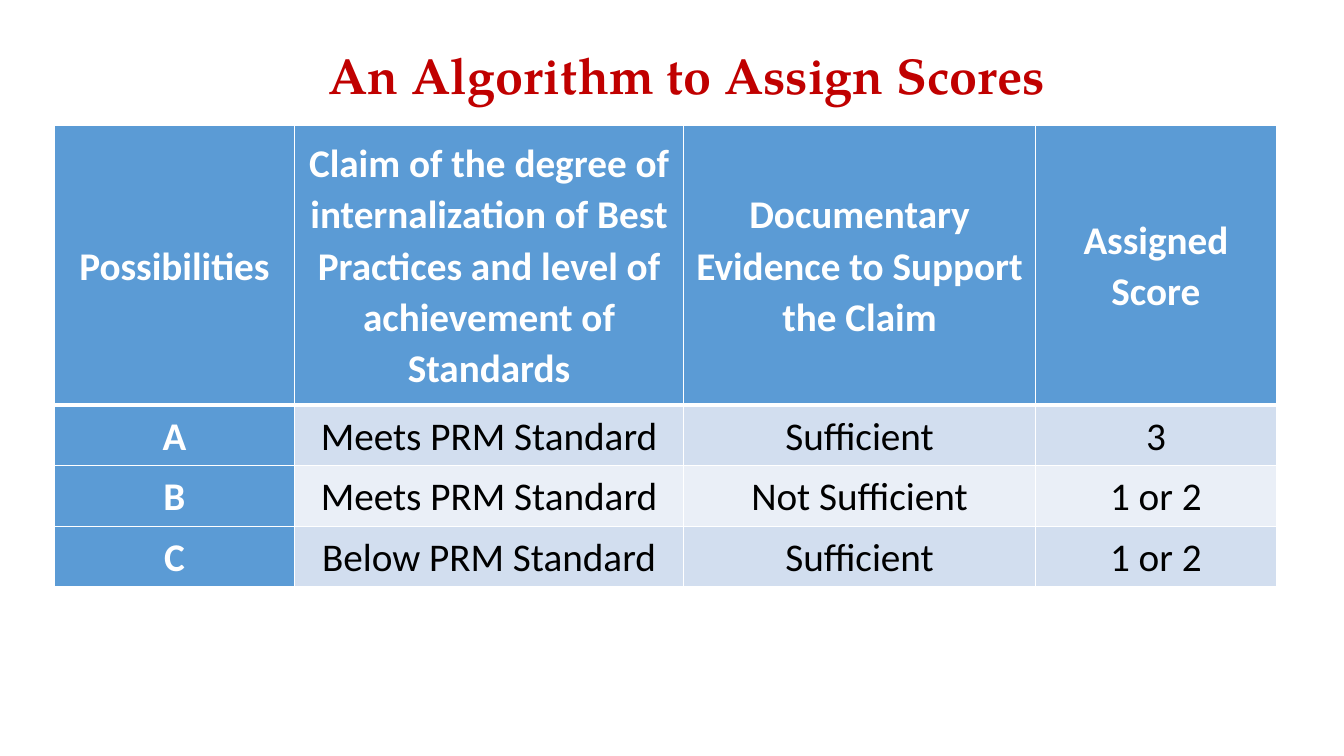
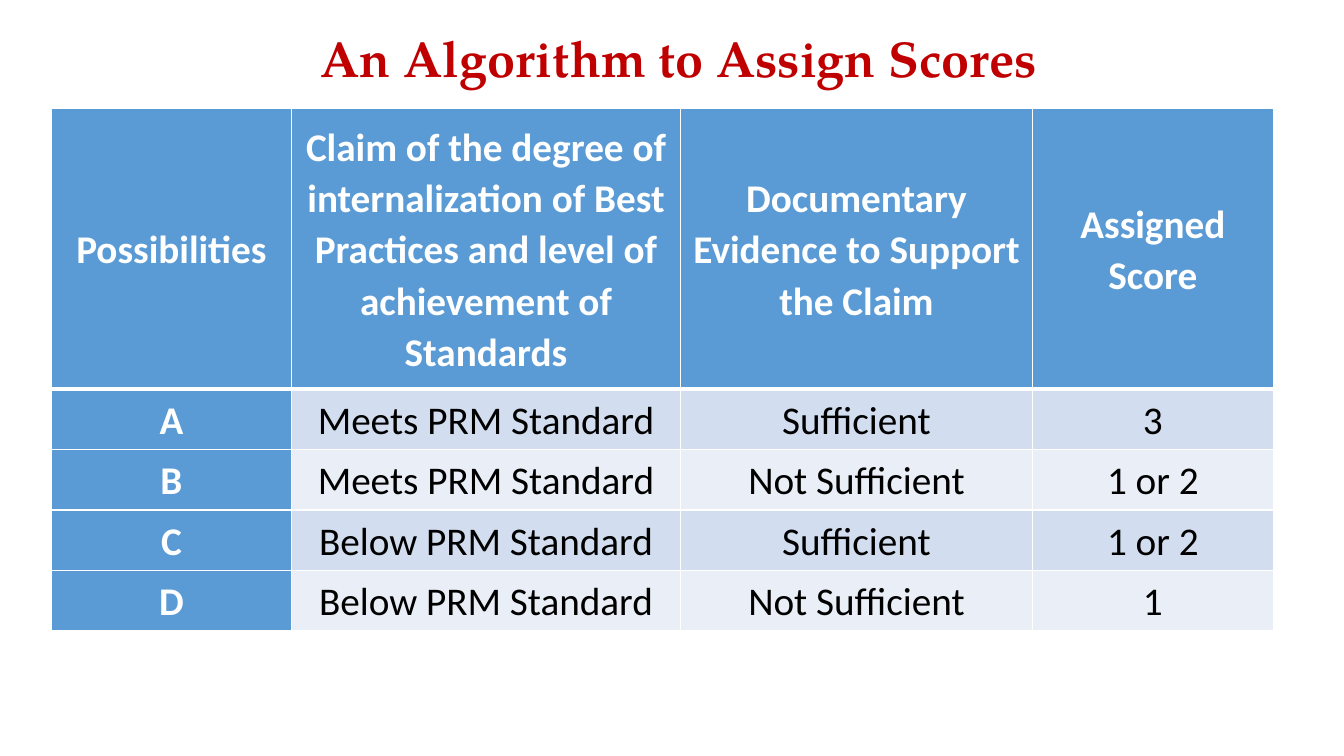
import lxml.etree
import pptx
import pptx.dml.color
import pptx.enum.text
import pptx.oxml.ns
import pptx.util

Inches = pptx.util.Inches
Pt = pptx.util.Pt
RGBColor = pptx.dml.color.RGBColor

TITLE_RED = RGBColor(0xC0, 0x00, 0x00)
HEADER_BLUE = RGBColor(0x5B, 0x9B, 0xD5)
BAND_DARK = RGBColor(0xD2, 0xDE, 0xEF)
BAND_LIGHT = RGBColor(0xEA, 0xEF, 0xF7)
WHITE = RGBColor(0xFF, 0xFF, 0xFF)
BLACK = RGBColor(0x00, 0x00, 0x00)

TITLE_FONT = "TeX Gyre Pagella"
TABLE_FONT = "Calibri"
TITLE_ONLY_LAYOUT = 5
LINE_SPACING = 1.07

COLUMN_WIDTHS = (2.38, 3.86, 3.49, 2.39)
HEADER_HEIGHT = 2.78
ROW_HEIGHT = 0.6

TITLE = "An Algorithm to Assign Scores"
HEADER = (
    "Possibilities",
    "Claim of the degree of internalization of Best Practices "
    "and level of achievement of Standards",
    "Documentary Evidence to Support the Claim",
    "Assigned Score",
)
POSSIBILITIES = (
    ("A", "Meets PRM Standard", "Sufficient", "3"),
    ("B", "Meets PRM Standard", "Not Sufficient", "1 or 2"),
    ("C", "Below PRM Standard", "Sufficient", "1 or 2"),
    ("D", "Below PRM Standard", "Not Sufficient", "1"),
)


def format_paragraph(paragraph, font_name, size, color, bold, alignment):
    paragraph.alignment = alignment
    paragraph.line_spacing = LINE_SPACING
    for run in paragraph.runs:
        run.font.name = font_name
        run.font.size = Pt(size)
        run.font.color.rgb = color
        run.font.bold = bold


def set_title(slide, left, top):
    title = slide.shapes.title
    title.left, title.top = Inches(left), Inches(top)
    title.width, title.height = Inches(7.35), Inches(0.72)
    text_frame = title.text_frame
    text_frame.text = TITLE
    text_frame.word_wrap = False
    text_frame.auto_size = pptx.enum.text.MSO_AUTO_SIZE.SHAPE_TO_FIT_TEXT
    text_frame.vertical_anchor = pptx.enum.text.MSO_ANCHOR.TOP
    paragraph = text_frame.paragraphs[0]
    paragraph.space_after = Pt(8)
    format_paragraph(paragraph, TITLE_FONT, 36, TITLE_RED, True,
                     pptx.enum.text.PP_ALIGN.LEFT)


def set_borders(cell, top_width, bottom_width):
    """Draw white cell borders; widths are in points, the sides are 1 pt."""
    widths = {"lnL": 1, "lnR": 1, "lnT": top_width, "lnB": bottom_width}
    properties = cell._tc.get_or_add_tcPr()
    qn = pptx.oxml.ns.qn
    for position, (tag, width) in enumerate(widths.items()):
        line = lxml.etree.Element(qn(f"a:{tag}"), w=str(Pt(width)))
        fill = lxml.etree.SubElement(line, qn("a:solidFill"))
        lxml.etree.SubElement(fill, qn("a:srgbClr"), val=str(WHITE))
        properties.insert(position, line)


def fill_cell(cell, text, row_index, column_index):
    is_heading = row_index == 0 or column_index == 0
    band = BAND_DARK if row_index % 2 else BAND_LIGHT
    cell.fill.solid()
    cell.fill.fore_color.rgb = HEADER_BLUE if is_heading else band
    cell.margin_left = cell.margin_right = Inches(0.07)
    cell.margin_top = cell.margin_bottom = 0
    cell.vertical_anchor = pptx.enum.text.MSO_ANCHOR.MIDDLE
    cell.text_frame.text = text
    format_paragraph(cell.text_frame.paragraphs[0], TABLE_FONT, 28,
                     WHITE if is_heading else BLACK, is_heading,
                     pptx.enum.text.PP_ALIGN.CENTER)
    set_borders(cell, top_width=3 if row_index == 1 else 1,
                bottom_width=3 if row_index == 0 else 1)


def add_score_table(slide, left, top, possibilities):
    rows = (HEADER, *possibilities)
    height = HEADER_HEIGHT + ROW_HEIGHT * len(possibilities)
    table = slide.shapes.add_table(
        len(rows), len(HEADER), Inches(left), Inches(top),
        Inches(sum(COLUMN_WIDTHS)), Inches(height)).table
    table.first_col = True
    for column, width in zip(table.columns, COLUMN_WIDTHS):
        column.width = Inches(width)
    for row_index, texts in enumerate(rows):
        row_height = ROW_HEIGHT if row_index else HEADER_HEIGHT
        table.rows[row_index].height = Inches(row_height)
        for column_index, text in enumerate(texts):
            fill_cell(table.cell(row_index, column_index), text,
                      row_index, column_index)


def add_score_slide(presentation, title_position, table_position, possibilities):
    layout = presentation.slide_layouts[TITLE_ONLY_LAYOUT]
    slide = presentation.slides.add_slide(layout)
    set_title(slide, *title_position)
    add_score_table(slide, *table_position, possibilities)


def main():
    presentation = pptx.Presentation()
    presentation.slide_width = Inches(13.33)
    presentation.slide_height = Inches(7.5)
    add_score_slide(presentation, (3.16, 0.35), (0.54, 1.24), POSSIBILITIES[:3])
    add_score_slide(presentation, (3.08, 0.18), (0.51, 1.08), POSSIBILITIES)
    presentation.save("out.pptx")


if __name__ == "__main__":
    main()
